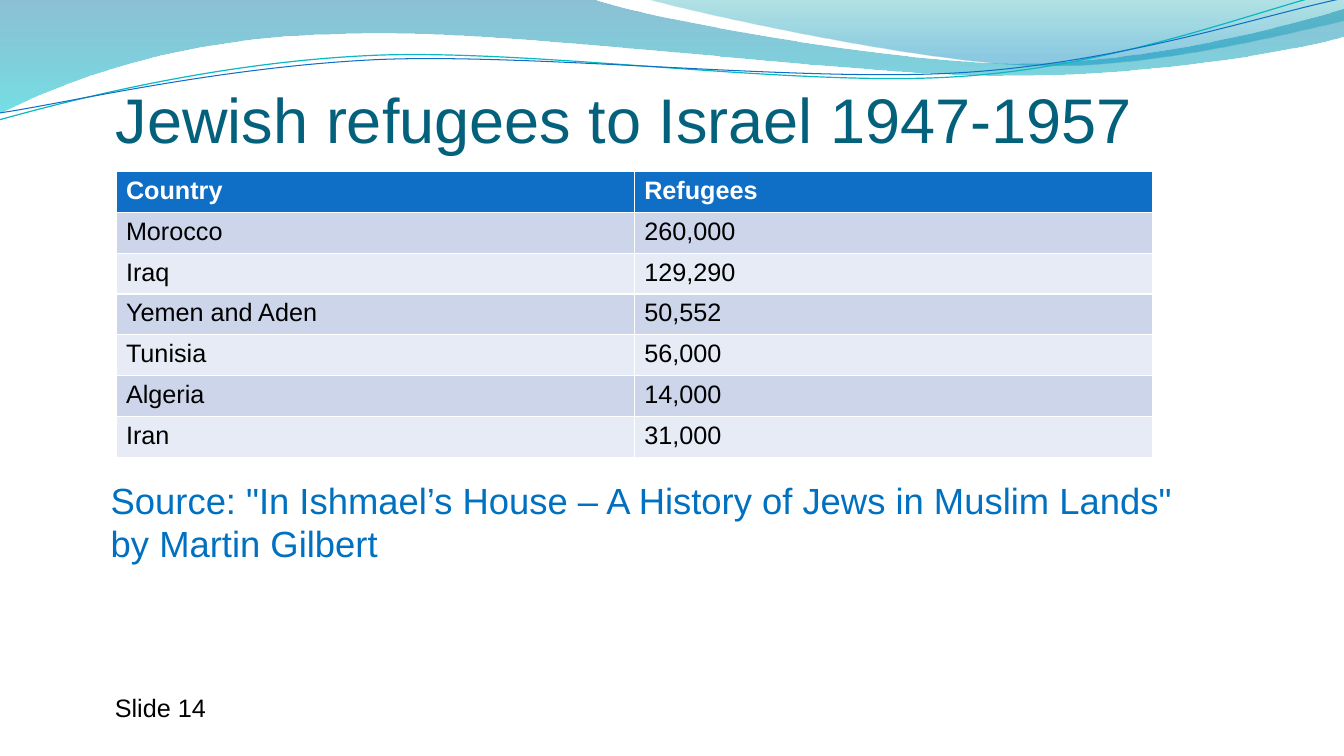
from math import cos, radians, sin

from lxml.etree import SubElement
from pptx import Presentation
from pptx.dml.color import RGBColor
from pptx.enum.text import MSO_ANCHOR
from pptx.oxml.ns import qn
from pptx.util import Inches, Pt

THEME = {
    "font": "Arial",
    "title": {"size": 45, "color": "04617B"},
    "header": {"size": 18, "color": "FFFFFF", "bold": True},
    "body": {"size": 18, "color": "000000", "bold": False},
    "source": {"size": 26, "color": "0070C0"},
    "header_fill": "0F6FC6",
    "band_fills": ["E7EBF5", "CCD5EA"],
    "left_wave": [(0, "0074A1", 45), (1, "00C6CF", 55)],
    "right_wave": [(0, "00A1A9", 30), (0.8, "008BBF", 45)],
    "teal_line": ("0AB8BF", 0.85),
    "blue_line": ("0F6FC6", 0.75),
}


def draw_curve(shapes, start, segments, closed):
    points = [(x, y) for segment in segments for x, y in zip(segment[::2], segment[1::2])]
    builder = shapes.build_freeform(*map(Inches, start))
    builder.add_line_segments([(Inches(x), Inches(y)) for x, y in points], close=closed)
    shape = builder.convert_to_shape()
    shape.shadow.inherit = False
    lines = iter(list(shape.element.spPr.iter(qn("a:lnTo"))))
    for segment in segments:
        first = next(lines)
        if len(segment) == 6:
            first.tag = qn("a:cubicBezTo")
            for line in (next(lines), next(lines)):
                first.append(line[0])
                line.getparent().remove(line)
    return shape


def write_text(frame, text, style):
    span = frame.paragraphs[0].add_run()
    span.text = text
    span.font.name = THEME["font"]
    span.font.size = Pt(style["size"])
    span.font.bold = style.get("bold", False)
    span.font.color.rgb = RGBColor.from_string(style["color"])


deck = Presentation()
deck.slide_width, deck.slide_height = Inches(13.33), Inches(7.5)
page = deck.slides.add_slide(deck.slide_layouts[6])

waves = [
    ("left_wave", (0, 0), [
        (5.87, -0.01), (6.34, 0.17, 8.85, 0.63, 10.11, 0.63),
        (11.38, 0.63, 12.78, 0.26, 13.33, 0.09), (13.35, 0.36),
        (13.11, 0.44, 11.6, 0.76, 9.94, 0.75), (8.29, 0.75, 5.09, 0.28, 3.43, 0.34),
        (1.72, 0.36, 0.61, 0.83, -0.01, 1.13), (0, 0)]),
    ("right_wave", (6.39, -0.01), [
        (6.79, 0.11, 9.09, 0.62, 10.25, 0.65), (11.41, 0.69, 12.82, 0.32, 13.33, 0.21),
        (13.33, 0), (6.39, -0.01)]),
]
for name, start, segments in waves:
    wave = draw_curve(page.shapes, start, segments, True)
    wave.line.fill.background()
    wave.fill.gradient()
    wave.fill.gradient_angle = 270
    for stop, (position, color, _) in zip(wave.fill.gradient_stops, THEME[name]):
        stop.position = position
        stop.color.rgb = RGBColor.from_string(color)
    color_nodes = wave.element.spPr.find(qn("a:gradFill")).iter(qn("a:srgbClr"))
    for node, (_, _, alpha) in zip(color_nodes, THEME[name]):
        SubElement(node, qn("a:alpha"), val=str(alpha * 1000))

tilt = radians(2.7)
ribbons = [
    ("teal_line", (6.65, 0.58), (-0.01, 1.19), [
        (0.64, 1.01, 2.11, 0.62, 3.69, 0.55), (5.27, 0.48, 7.9, 0.87, 9.5, 0.76),
        (11.1, 0.66, 12.52, 0.08, 13.31, -0.1)]),
    ("blue_line", (6.67, 0.59), (0, 1.12), [
        (0.63, 1.03, 2.18, 0.66, 3.78, 0.59), (5.37, 0.53, 7.96, 0.82, 9.55, 0.72),
        (11.15, 0.62, 12.55, 0.14, 13.34, -0.02)]),
]
for name, (center_x, center_y), start, segments in ribbons:
    level = []
    for segment in [start, *segments]:
        offsets = [(x - center_x, y - center_y) for x, y in zip(segment[::2], segment[1::2])]
        level.append([value for x, y in offsets for value in (
            center_x + x * cos(tilt) - y * sin(tilt),
            center_y + x * sin(tilt) + y * cos(tilt))])
    color, width = THEME[name]
    ribbon = draw_curve(page.shapes, level[0], level[1:], False)
    ribbon.rotation = 357.3
    ribbon.fill.background()
    ribbon.line.color.rgb = RGBColor.from_string(color)
    ribbon.line.width = Pt(width)

refugees = [
    ("Country", "Refugees"),
    ("Morocco", "260,000"),
    ("Iraq", "129,290"),
    ("Yemen and Aden", "50,552"),
    ("Tunisia", "56,000"),
    ("Algeria", "14,000"),
    ("Iran", "31,000"),
]
table = page.shapes.add_table(
    len(refugees), 2, Inches(1.15), Inches(1.7), Inches(10.28), Inches(2.84)).table
for row, record in enumerate(refugees):
    style = THEME["body" if row else "header"]
    fill = THEME["band_fills"][row % 2] if row else THEME["header_fill"]
    for column, text in enumerate(record):
        cell = table.cell(row, column)
        write_text(cell.text_frame, text, style)
        cell.fill.solid()
        cell.fill.fore_color.rgb = RGBColor.from_string(fill)

texts = [
    ("Jewish refugees to Israel 1947-1957", "title", (1.15, 0.8, 12, 0.75),
     {"vertical_anchor": MSO_ANCHOR.BOTTOM, "margin_left": 0, "margin_right": 0, "margin_bottom": 0}),
    ("Source: \"In Ishmael’s House – A History of Jews in Muslim Lands\" by Martin Gilbert",
     "source", (1, 4.69, 10.87, 0.98), {}),
    ("Slide 14", "body", (1.04, 6.82, 1.18, 0.4), {}),
]
for text, style, place, frame_format in texts:
    box = page.shapes.add_textbox(*map(Inches, place))
    for attribute, value in {"word_wrap": True, **frame_format}.items():
        setattr(box.text_frame, attribute, value)
    write_text(box.text_frame, text, THEME[style])

deck.save("out.pptx")
